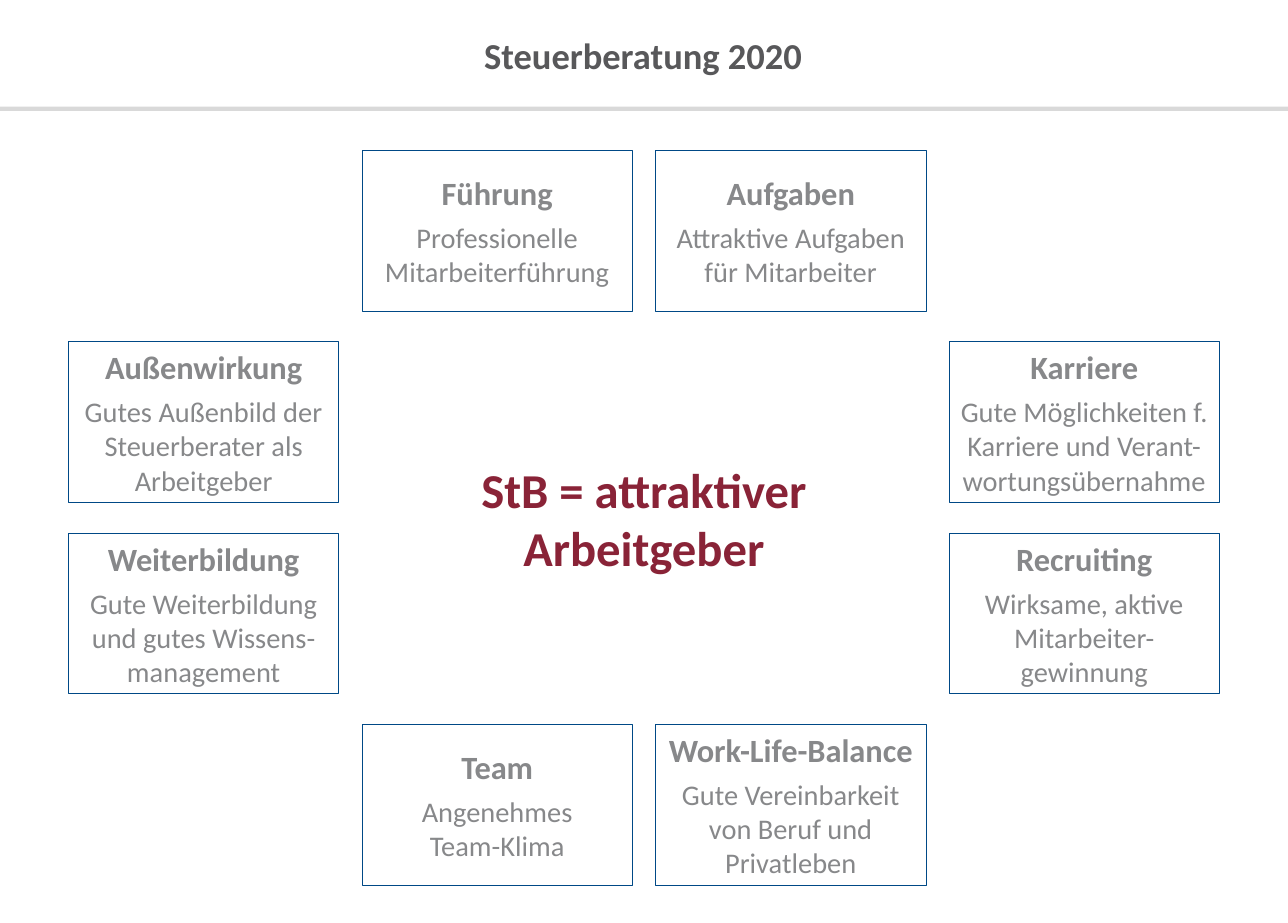
from dataclasses import dataclass

from pptx import Presentation
from pptx.dml.color import RGBColor
from pptx.enum.shapes import MSO_SHAPE
from pptx.enum.text import MSO_ANCHOR, PP_ALIGN
from pptx.shapes.base import BaseShape
from pptx.slide import Slide
from pptx.text.text import TextFrame
from pptx.util import Inches, Pt

RECTANGLE = MSO_SHAPE.RECTANGLE
MIDDLE = MSO_ANCHOR.MIDDLE
CENTER = PP_ALIGN.CENTER

FONT = "Calibri"
COLORS = {
    "title": "58585A",
    "rule": "D9D9D9",
    "card": "FFFFFF",
    "border": "004986",
    "text": "87888A",
    "core": "892337",
}

# Slide and card grid, in inches
SLIDE_WIDTH, SLIDE_HEIGHT = 8.82, 6.32
GRID_LEFT, GRID_TOP = 0.47, 1.03
COLUMN_STEP, ROW_STEP = 2.01, 1.31
CARD_WIDTH, CARD_HEIGHT = 1.85, 1.1


@dataclass(frozen=True)
class Card:
    column: int
    row: int
    heading: str
    body: str
    side_inset: float = 0.1


@dataclass(frozen=True)
class Label:
    text: str
    left: float
    top: float
    width: float
    height: float
    size: int
    color: str


CARDS = [
    Card(0, 1, "Außenwirkung", "Gutes Außenbild der Steuerberater als Arbeitgeber"),
    Card(3, 1, "Karriere", "Gute Möglichkeiten f. Karriere und Verant-wortungsübernahme", 0.04),
    Card(1, 0, "Führung", "Professionelle Mitarbeiterführung"),
    Card(2, 0, "Aufgaben", "Attraktive Aufgaben für Mitarbeiter", 0.08),
    Card(0, 2, "Weiterbildung", "Gute Weiterbildung und gutes Wissens-management"),
    Card(3, 2, "Recruiting", "Wirksame, aktive Mitarbeiter-gewinnung"),
    Card(1, 3, "Team", "Angenehmes\nTeam-Klima"),
    Card(2, 3, "Work-Life-Balance", "Gute Vereinbarkeit von Beruf und Privatleben", 0.04),
]

LABELS = [
    Label("Steuerberatung 2020", GRID_LEFT, 0.15, 7.87, 0.45, 18, "title"),
    Label("StB = attraktiver Arbeitgeber", 3.11, 2.72, 2.6, 1.65, 24, "core"),
]


def color(name: str) -> RGBColor:
    return RGBColor.from_string(COLORS[name])


def prepare_frame(text_frame: TextFrame, side_inset: float = 0.1) -> None:
    text_frame.word_wrap = True
    text_frame.vertical_anchor = MIDDLE
    text_frame.margin_left = text_frame.margin_right = Inches(side_inset)
    text_frame.margin_top = text_frame.margin_bottom = Inches(0.05)


def format_paragraph(paragraph, size: int, color_name: str, bold: bool) -> None:
    paragraph.alignment = CENTER
    for run in paragraph.runs:
        run.font.name = FONT
        run.font.size = Pt(size)
        run.font.bold = bold
        run.font.color.rgb = color(color_name)


def add_rectangle(slide: Slide, left: float, top: float, width: float,
                  height: float, fill: str) -> BaseShape:
    shape = slide.shapes.add_shape(
        RECTANGLE, Inches(left), Inches(top), Inches(width), Inches(height))
    shape.shadow.inherit = False
    shape.fill.solid()
    shape.fill.fore_color.rgb = color(fill)
    shape.line.fill.background()
    return shape


def add_card(slide: Slide, card: Card) -> None:
    shape = add_rectangle(
        slide, GRID_LEFT + card.column * COLUMN_STEP, GRID_TOP + card.row * ROW_STEP,
        CARD_WIDTH, CARD_HEIGHT, "card")
    shape.line.color.rgb = color("border")
    shape.line.width = Pt(0.25)
    text_frame = shape.text_frame
    prepare_frame(text_frame, card.side_inset)
    heading = text_frame.paragraphs[0]
    heading.text = card.heading
    heading.space_after = Pt(4)
    format_paragraph(heading, 16, "text", True)
    body = text_frame.add_paragraph()
    body.text = card.body
    format_paragraph(body, 14, "text", False)


def add_label(slide: Slide, label: Label) -> None:
    box = slide.shapes.add_textbox(
        Inches(label.left), Inches(label.top), Inches(label.width), Inches(label.height))
    prepare_frame(box.text_frame)
    box.text_frame.text = label.text
    format_paragraph(box.text_frame.paragraphs[0], label.size, label.color, True)


def main() -> None:
    presentation = Presentation()
    presentation.slide_width = Inches(SLIDE_WIDTH)
    presentation.slide_height = Inches(SLIDE_HEIGHT)
    slide = presentation.slides.add_slide(presentation.slide_layouts[6])

    # Rule below the title
    add_rectangle(slide, 0, 0.73, SLIDE_WIDTH, 0.03, "rule")

    # Ring of cards
    for card in CARDS:
        add_card(slide, card)

    # Title and central message
    for label in LABELS:
        add_label(slide, label)

    presentation.save("out.pptx")


if __name__ == "__main__":
    main()
